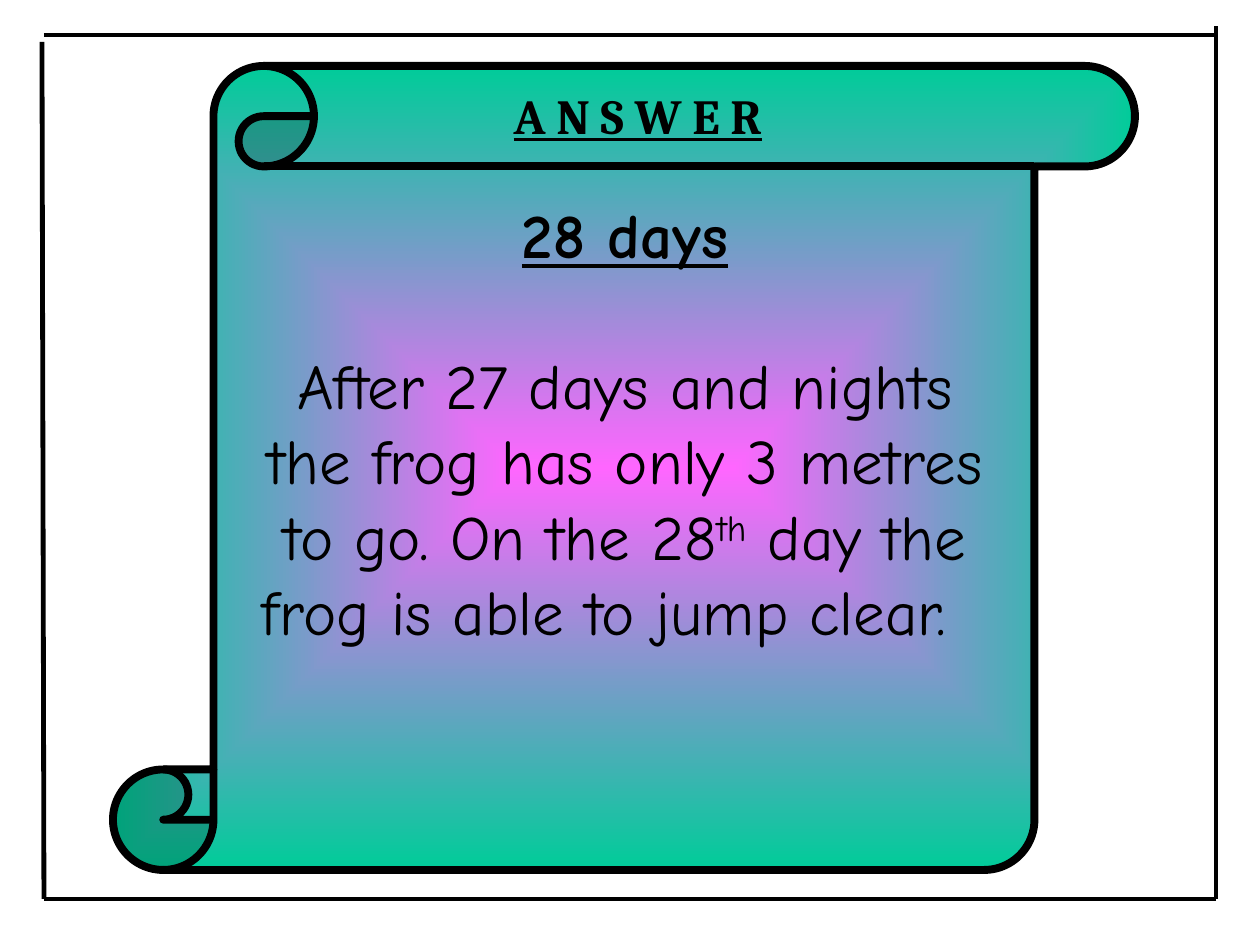
from pptx import Presentation
from pptx.dml.color import RGBColor
from pptx.enum.shapes import MSO_CONNECTOR as Connector, MSO_SHAPE as Preset
from pptx.enum.text import MSO_ANCHOR as Anchor, MSO_AUTO_SIZE as AutoSize, PP_ALIGN as Align
from pptx.oxml import parse_xml
from pptx.oxml.ns import nsdecls, qn
from pptx.util import Pt

PX = 914400 / 126
COLORS = {"ink": "000000", "center": "FF66FF", "edge": "00CC99"}
HEADING = {"name": "Cambria", "size": Pt(28), "bold": True, "underline": True}
RESULT = {"name": "Comic Neue", "size": Pt(36), "bold": True, "underline": True}
BODY = {**RESULT, "bold": False, "underline": False}


def emu(*lengths):
    """Turn px lengths into EMU."""
    return [round(length * PX) for length in lengths]


def color(name):
    """Return a palette colour."""
    return RGBColor.from_string(COLORS[name])


def set_line(shape, width):
    """Give a shape or connector a solid ink line."""
    shape.line.color.rgb = color("ink")
    shape.line.width = Pt(width)


def add_run(paragraph, text, style):
    """Append a formatted run and return it."""
    run = paragraph.add_run()
    run.text = text
    for key, value in style.items():
        setattr(run.font, key, value)
    run.font.color.rgb = color("ink")
    return run


def add_scroll(slide, left, top, width, height):
    """Draw the scroll with a gradient spreading from its centre."""
    scroll = slide.shapes.add_shape(Preset.VERTICAL_SCROLL, *emu(left, top, width, height))
    scroll.shadow.inherit = False
    scroll.adjustments[0] = 0.125
    set_line(scroll, 4.5)
    scroll.fill.gradient()
    for stop, name, position in zip(scroll.fill.gradient_stops, ("center", "edge"), (0, 1)):
        stop.color.rgb = color(name)
        stop.position = position
    gradient = scroll._element.spPr.find(qn("a:gradFill"))
    gradient.replace(gradient.find(qn("a:lin")), parse_xml(
        f'<a:path {nsdecls("a")} path="rect">'
        '<a:fillToRect l="50000" t="50000" r="50000" b="50000"/></a:path>'))


def add_heading(slide, left, top, width, height):
    """Place the title on the scroll's upper roll."""
    title = slide.shapes.title
    title.left, title.top, title.width, title.height = emu(left, top, width, height)
    frame = title.text_frame
    layout = {"word_wrap": False, "auto_size": AutoSize.SHAPE_TO_FIT_TEXT,
              "vertical_anchor": Anchor.TOP}
    for key, value in layout.items():
        setattr(frame, key, value)
    paragraph = frame.paragraphs[0]
    paragraph.alignment = Align.LEFT
    add_run(paragraph, "A N S W E R", HEADING)


def add_explanation(slide, left, top, width, height):
    """Write the result and the reasoning below it."""
    frame = slide.shapes.add_textbox(*emu(left, top, width, height)).text_frame
    frame.word_wrap = True
    frame.auto_size = AutoSize.SHAPE_TO_FIT_TEXT
    result, reasoning = frame.paragraphs[0], frame.add_paragraph()
    result.alignment = reasoning.alignment = Align.CENTER
    reasoning.space_before = Pt(43)
    add_run(result, "28 days", RESULT)
    add_run(reasoning, "After 27 days and nights the frog has only 3 metres to go. On the 28", BODY)
    ordinal = add_run(reasoning, "th", BODY)
    ordinal.font._element.set("baseline", "30000")
    add_run(reasoning, " day the frog is able to jump clear.  ", BODY)


def add_border(slide, left, top, width, height):
    """Frame the slide with four slightly uneven lines."""
    right, bottom = left + width, top + height
    sides = [(left, bottom, right, bottom), (left, top, right, top),
             (left, bottom, left - 2, top + 7), (right, bottom, right, top - 9)]
    for side in sides:
        line = slide.shapes.add_connector(Connector.STRAIGHT, *emu(*side))
        set_line(line, 2.75)
        line._element.spPr.append(parse_xml(f'<a:effectLst {nsdecls("a")}/>'))


def main():
    """Build and save the answer slide."""
    presentation = Presentation()
    presentation.slide_width, presentation.slide_height = emu(1260, 945)
    slide = presentation.slides.add_slide(presentation.slide_layouts[5])
    add_scroll(slide, 113, 66, 1022, 804)
    add_explanation(slide, 243, 189, 764, 770)
    add_heading(slide, 501, 79, 331, 72)
    add_border(slide, 44, 35, 1172, 864)
    tree = slide.shapes._spTree
    tree.append(slide.shapes.title._element)
    presentation.save("out.pptx")


if __name__ == "__main__":
    main()
